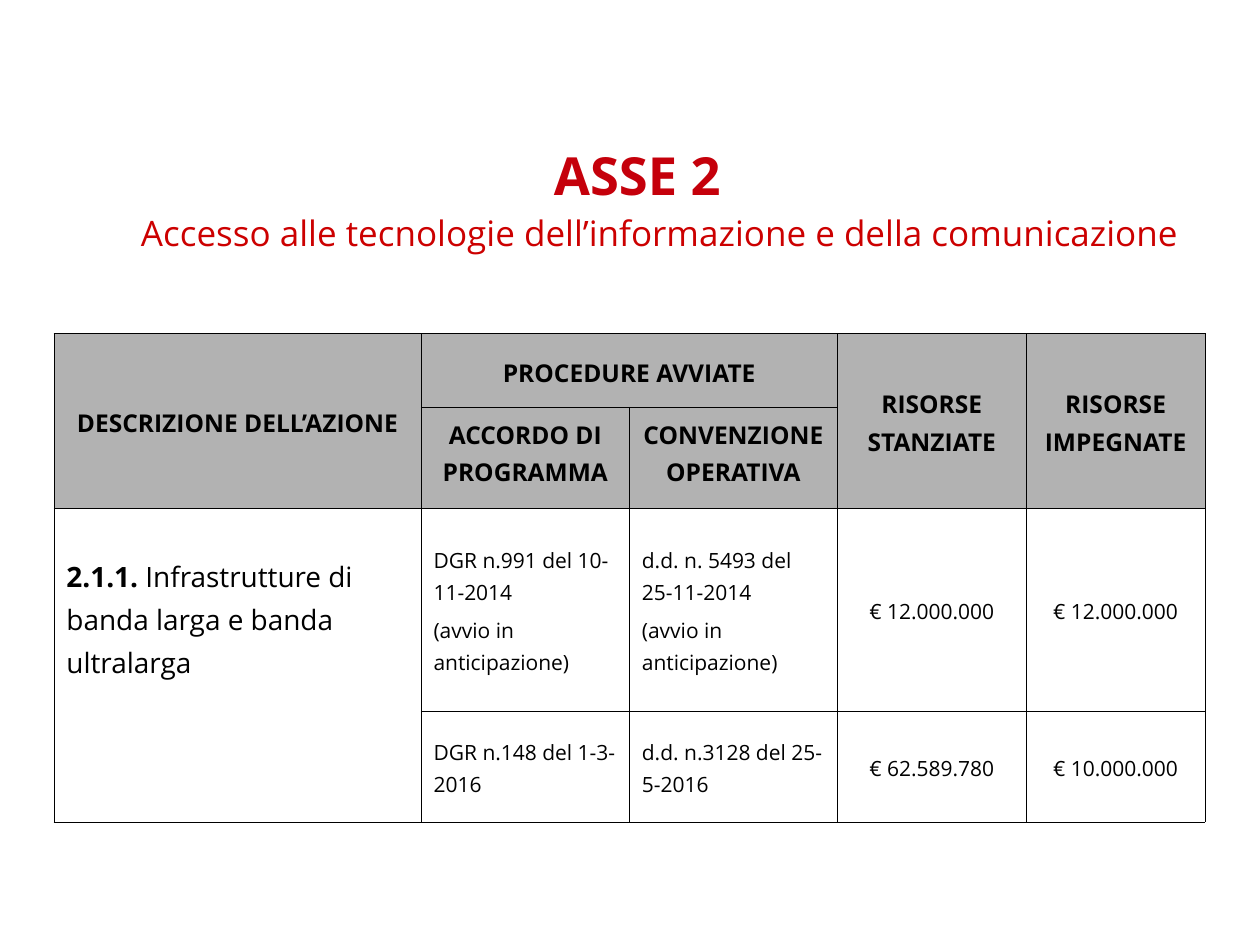
import pptx
import pptx.util
import pptx.dml.color
import pptx.enum.text
import pptx.oxml
import pptx.oxml.ns

Cm, Pt = pptx.util.Cm, pptx.util.Pt
ALIGN, ANCHOR = pptx.enum.text.PP_ALIGN, pptx.enum.text.MSO_ANCHOR

COLOURS = {"title": "C5000B", "subtitle": "CC0000", "text": "000000", "header": "B2B2B2"}
FONT = "Open Sans"
SPACING = 1.13

TITLE = [
    ("ASSE 2", {"size": Pt(30), "bold": True}, "title"),
    ("Accesso alle tecnologie dell’informazione e della comunicazione",
     {"size": Pt(20), "bold": False}, "subtitle"),
]
TITLE_PLACE = {"left": Cm(0), "top": Cm(2.72), "width": Cm(25.4), "height": Cm(1.4)}
TABLE_PLACE = (Cm(1.09), Cm(6.72), Cm(23.2), Cm(9.85))
COLUMNS = [7.4, 4.2, 4.19, 3.81, 3.6]
ROWS = [1.49, 2.03, 4.1, 2.23]
ACTION = (2, 0)
MERGES = [((0, 0), (1, 0)), ((0, 1), (0, 2)), ((0, 3), (1, 3)), ((0, 4), (1, 4)),
          (ACTION, (3, 0))]
CELLS = [
    ["DESCRIZIONE DELL’AZIONE", "PROCEDURE AVVIATE", None, "RISORSE STANZIATE",
     "RISORSE IMPEGNATE"],
    [None, "ACCORDO DI PROGRAMMA", "CONVENZIONE OPERATIVA", None, None],
    [[("2.1.1. ", True), ("Infrastrutture di banda larga e banda ultralarga", False)],
     "DGR n.991 del 10-11-2014\n(avvio in anticipazione)",
     "d.d. n. 5493 del 25-11-2014\n(avvio in anticipazione)",
     "€ 12.000.000", "€ 12.000.000"],
    [None, "DGR n.148 del 1-3-2016", "d.d. n.3128 del 25-5-2016",
     "€ 62.589.780", "€ 10.000.000"],
]


def apply(target, values):
    for name, value in values.items():
        setattr(target, name, value)


def add_span(para, text, values, colour):
    span = para.add_run()
    span.text = text
    apply(span.font, {"name": FONT, **values})
    span.font.color.rgb = pptx.dml.color.RGBColor.from_string(COLOURS[colour])


def draw_borders(cell):
    properties = cell._tc.get_or_add_tcPr()
    for side in "LRTB":
        properties.append(pptx.oxml.parse_xml(
            f'<a:ln{side} {pptx.oxml.ns.nsdecls("a")} w="{Pt(0.45)}"><a:solidFill>'
            f'<a:srgbClr val="{COLOURS["text"]}"/></a:solidFill></a:ln{side}>'))


def fill_cell(cell, content, row, column):
    header = row < 2
    draw_borders(cell)
    if header:
        cell.fill.solid()
        cell.fill.fore_color.rgb = pptx.dml.color.RGBColor.from_string(COLOURS["header"])
    else:
        cell.fill.background()
    action = (row, column) == ACTION
    apply(cell, {
        "margin_left": Cm(0.25), "margin_right": Cm(0.25), "margin_top": Cm(0.13),
        "margin_bottom": Cm(2.06 if action else 0.13),
        "vertical_anchor": ANCHOR.TOP if row == 1 else ANCHOR.MIDDLE,
    })
    if content is None:
        return
    size = Pt(14 if header else 16 if action else 12)
    lines = [content] if action else [[(line, header)] for line in content.split("\n")]
    for number, line in enumerate(lines):
        para = cell.text_frame.add_paragraph() if number else cell.text_frame.paragraphs[0]
        apply(para, {
            "alignment": ALIGN.CENTER if header or column > 2 else ALIGN.LEFT,
            "line_spacing": SPACING, "space_before": Pt(3 if number else 0),
        })
        for text, bold in line:
            add_span(para, text, {"size": size, "bold": bold}, "text")


def add_title(page):
    box = page.shapes.title
    apply(box, TITLE_PLACE)
    apply(box.text_frame, {
        "margin_left": 0, "margin_right": 0, "margin_top": 0, "margin_bottom": 0,
        "word_wrap": True, "vertical_anchor": ANCHOR.TOP,
        "auto_size": pptx.enum.text.MSO_AUTO_SIZE.NONE,
    })
    para = box.text_frame.paragraphs[0]
    apply(para, {"alignment": ALIGN.CENTER, "line_spacing": SPACING, "space_after": Pt(14.2)})
    for name, value in {"marL": Cm(1.2), "indent": Cm(-0.9)}.items():
        para._p.get_or_add_pPr().set(name, str(value))
    for number, (text, values, colour) in enumerate(TITLE):
        if number:
            para.add_line_break()
        add_span(para, text, values, colour)


def add_actions_table(page):
    table = page.shapes.add_table(len(ROWS), len(COLUMNS), *TABLE_PLACE).table
    apply(table, {"first_row": False, "horz_banding": False})
    for column, width in zip(table.columns, COLUMNS):
        column.width = Cm(width)
    for row, height in zip(table.rows, ROWS):
        row.height = Cm(height)
    for first, last in MERGES:
        table.cell(*first).merge(table.cell(*last))
    for row, contents in enumerate(CELLS):
        for column, content in enumerate(contents):
            fill_cell(table.cell(row, column), content, row, column)


def main():
    """Build the slide on the actions of axis 2."""
    deck = pptx.Presentation()
    apply(deck, {"slide_width": Cm(25.4), "slide_height": Cm(19.05)})
    page = deck.slides.add_slide(deck.slide_layouts[5])
    add_title(page)
    add_actions_table(page)
    deck.save("out.pptx")


if __name__ == "__main__":
    main()
